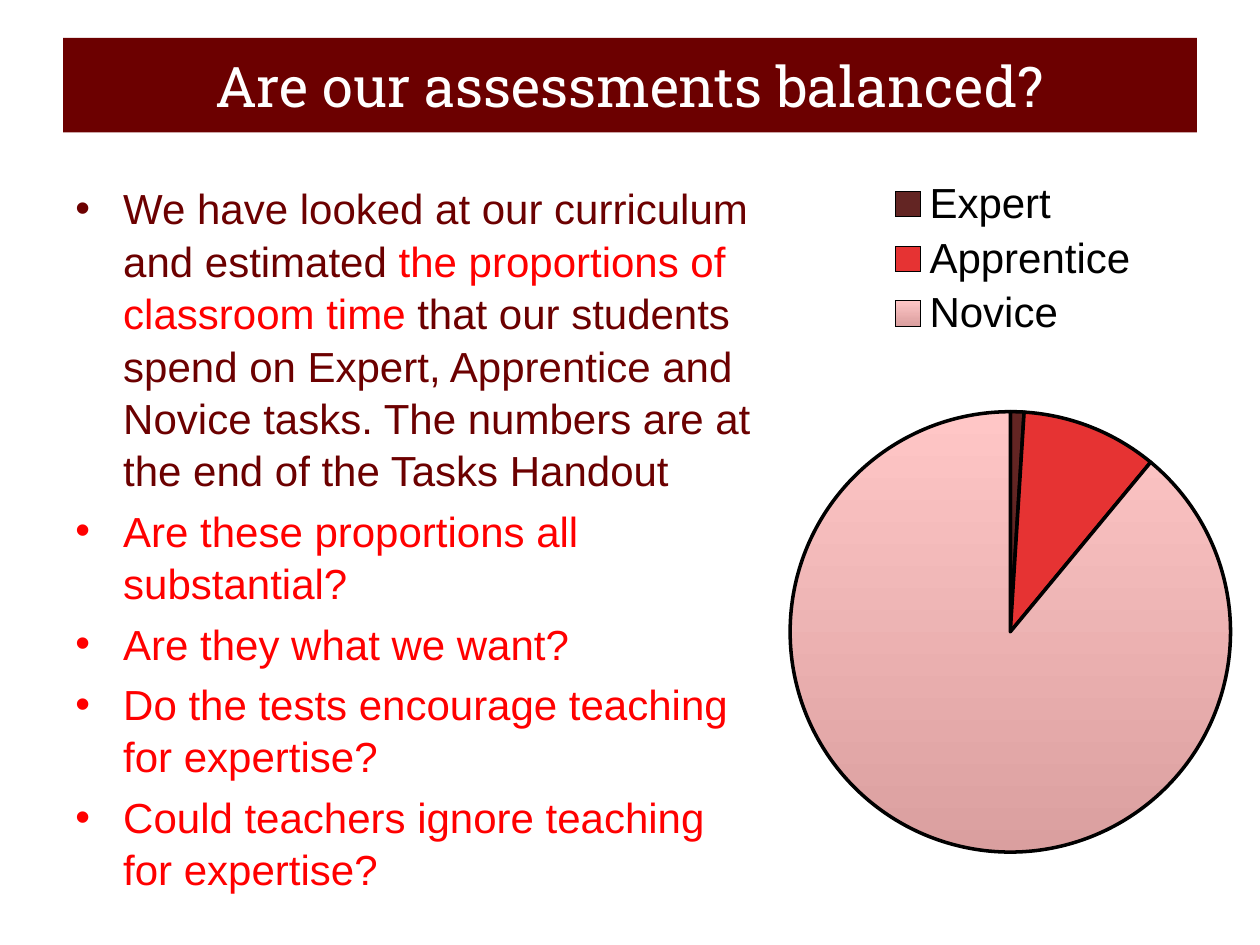
from lxml import etree
from pptx import Presentation
from pptx import util as u
from pptx.chart.data import CategoryChartData
from pptx.dml.color import RGBColor
from pptx.enum import chart as c, text as t
from pptx.oxml.ns import qn

MAROON = RGBColor(0x6C, 0x00, 0x00)
RED = RGBColor(0xFF, 0x00, 0x00)
WHITE = RGBColor(0xFF, 0xFF, 0xFF)
BLACK = RGBColor(0x00, 0x00, 0x00)
EXPERT = RGBColor(0x63, 0x25, 0x23)
APPRENTICE = RGBColor(0xE6, 0x33, 0x33)
NOVICE_TOP = RGBColor(0xFF, 0xC6, 0xC6)
NOVICE_BOTTOM = RGBColor(0xDA, 0x9F, 0x9F)

QUESTIONS = [
    [("We have looked at our curriculum and estimated ", MAROON),
     ("the proportions of classroom time", RED),
     (" that our students spend on Expert, Apprentice and Novice tasks. "
      "The numbers are at the end of the Tasks Handout", MAROON)],
    [("Are these proportions all substantial?", RED)],
    [("Are they what we want?", RED)],
    [("Do the tests encourage teaching for expertise?", RED)],
    [("Could teachers ignore teaching for expertise?", RED)],
]
TASK_SHARES = {"Expert": 1, "Apprentice": 10, "Novice": 89}


def assign(target, values):
    for name, value in values.items():
        setattr(target, name, value)


class SlideBuilder:
    title_font = {"name": "Roboto Slab", "size": u.Pt(32), "bold": False}
    body_font = {"name": "Arial", "size": u.Pt(24)}
    paragraph_format = {"space_before": u.Pt(4.6), "line_spacing": 1.04}
    indent = u.Inches(0.38)

    def __init__(self, presentation):
        self.presentation = presentation
        self.slide = presentation.slides.add_slide(presentation.slide_layouts[5])

    def box(self, left, top, width, height):
        across, down = self.presentation.slide_width, self.presentation.slide_height
        return (round(left * across), round(top * down),
                round(width * across), round(height * down))

    def title(self, wording, *shares):
        shape = self.slide.shapes.title
        assign(shape, dict(zip(("left", "top", "width", "height"), self.box(*shares))))
        shape.fill.solid()
        shape.fill.fore_color.rgb = MAROON
        assign(shape.text_frame, {"text": wording, "word_wrap": True,
                                  "auto_size": t.MSO_AUTO_SIZE.NONE,
                                  "vertical_anchor": t.MSO_ANCHOR.MIDDLE})
        paragraph = shape.text_frame.paragraphs[0]
        paragraph.alignment = t.PP_ALIGN.CENTER
        self.style(paragraph.runs[0].font, self.title_font, WHITE)

    def style(self, font, values, color):
        assign(font, values)
        font.color.rgb = color

    def bullets(self, items, *shares):
        frame = self.slide.shapes.add_textbox(*self.box(*shares)).text_frame
        frame.word_wrap = True
        for index, item in enumerate(items):
            paragraph = frame.add_paragraph() if index else frame.paragraphs[0]
            assign(paragraph, self.paragraph_format)
            properties = paragraph._p.get_or_add_pPr()
            properties.set("marL", str(self.indent))
            properties.set("indent", str(-self.indent))
            etree.SubElement(properties, qn("a:buFont")).set("typeface", "Arial")
            etree.SubElement(properties, qn("a:buChar")).set("char", "•")
            for wording, color in item:
                run = paragraph.add_run()
                run.text = wording
                self.style(run.font, self.body_font, color)

    def pie(self, shares_by_task, *shares):
        data = CategoryChartData()
        data.categories = list(shares_by_task)
        data.add_series("Series 1", list(shares_by_task.values()))
        chart = self.slide.shapes.add_chart(
            c.XL_CHART_TYPE.PIE, *self.box(*shares), data).chart
        assign(chart, {"has_title": False, "has_legend": True})
        assign(chart.font, {"name": "Times New Roman", "size": u.Pt(18)})
        assign(chart.legend, {"position": c.XL_LEGEND_POSITION.TOP,
                              "include_in_layout": False})
        self.style(chart.legend.font, self.body_font, BLACK)
        plot = chart.plots[0]
        plot.vary_by_categories = True
        points = plot.series[0].points
        for index, color in enumerate((EXPERT, APPRENTICE, None)):
            slice_format = points[index].format
            slice_format.line.width = u.Pt(2)
            slice_format.line.color.rgb = BLACK
            if color:
                slice_format.fill.solid()
                slice_format.fill.fore_color.rgb = color
            else:
                self.gradient(slice_format.fill, NOVICE_TOP, NOVICE_BOTTOM)
        area = chart._chartSpace.chart.plotArea
        self.place(area, 0, 0.04, 0.33, 0.93, 0.59, inner=True)
        self.place(chart.legend._element, 1, 0.23, 0.01, 0.56, 0.23)

    def gradient(self, fill, start, end):
        fill.gradient()
        fill.gradient_angle = 270
        for stop, color in zip(fill.gradient_stops, (start, end)):
            stop.color.rgb = color

    def place(self, element, position, x, y, w, h, inner=False):
        for old in element.findall(qn("c:layout")):
            element.remove(old)
        layout = etree.Element(qn("c:layout"))
        element.insert(position, layout)
        manual = etree.SubElement(layout, qn("c:manualLayout"))
        values = {"layoutTarget": "inner"} if inner else {}
        values.update(xMode="edge", yMode="edge", x=x, y=y, w=w, h=h)
        for name, value in values.items():
            etree.SubElement(manual, qn("c:" + name)).set("val", str(value))


def main():
    presentation = Presentation()
    assign(presentation, {"slide_width": u.Inches(10), "slide_height": u.Inches(7.5)})
    builder = SlideBuilder(presentation)
    builder.title("Are our assessments balanced?", 0.05, 0.04, 0.9, 0.1)
    builder.bullets(QUESTIONS, 0.05, 0.185, 0.56, 0.745)
    builder.pie(TASK_SHARES, 0.61, 0.175, 0.38, 0.79)
    presentation.save("out.pptx")


if __name__ == "__main__":
    main()
